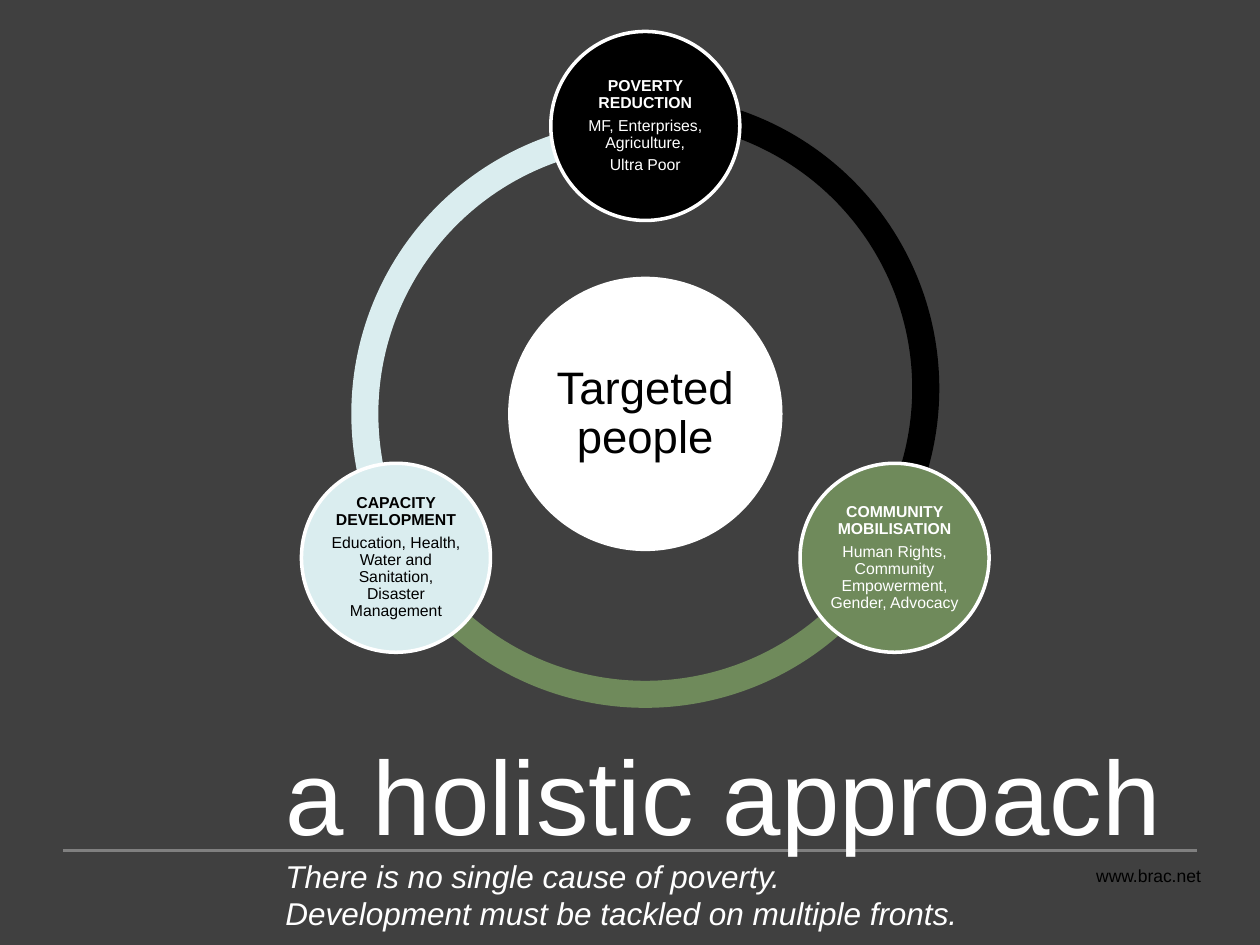
from math import cos, radians, sin

from lxml import etree
from pptx import Presentation
from pptx.dml.color import RGBColor
from pptx.enum.shapes import MSO_CONNECTOR, MSO_SHAPE
from pptx.enum.text import MSO_ANCHOR, MSO_AUTO_SIZE, PP_ALIGN
from pptx.oxml.ns import qn
from pptx.util import Pt

ARC, OVAL = MSO_SHAPE.BLOCK_ARC, MSO_SHAPE.OVAL
STRAIGHT = MSO_CONNECTOR.STRAIGHT
MIDDLE = MSO_ANCHOR.MIDDLE
GROW = MSO_AUTO_SIZE.SHAPE_TO_FIT_TEXT
LEFT, CENTER, RIGHT = PP_ALIGN.LEFT, PP_ALIGN.CENTER, PP_ALIGN.RIGHT

FONT = "Arial"
BLACK, WHITE, GREY, BACKGROUND = "000000", "FFFFFF", "808080", "404040"
PALE, GREEN = "DAEDEF", "6F8A5B"

ARCS = [
    (162, 270, 236.5, PALE),
    (18, 162, 236.5, GREEN),
    (270, 18, 222, BLACK),
]
TARGET = "Targeted people"
THEMES = [
    (-90, BLACK, WHITE, ["POVERTY REDUCTION", "MF, Enterprises, Agriculture,", "Ultra Poor"]),
    (30, GREEN, WHITE, ["COMMUNITY MOBILISATION",
                        "Human Rights, Community Empowerment, Gender, Advocacy"]),
    (150, PALE, BLACK, ["CAPACITY DEVELOPMENT",
                        "Education, Health, Water and Sanitation, Disaster Management"]),
]
TITLE = "a holistic approach"
SUBTITLE = ["There is no single cause of poverty.",
            "Development must be tackled on multiple fronts."]
WEBSITE = "www.brac.net"

CENTER_X, CENTER_Y = 368.75, 236.5
ORBIT, RING_SIZE, TARGET_SIZE, THEME_SIZE = 164.5, 336, 154.8, 108


def color(hex_code):
    return RGBColor.from_string(hex_code)


def add_round(kind, x, y, size, fill, outline=None):
    shape = slide.shapes.add_shape(kind, Pt(x - size / 2), Pt(y - size / 2), Pt(size), Pt(size))
    shape.shadow.inherit = False
    shape.fill.solid()
    shape.fill.fore_color.rgb = color(fill)
    if outline:
        shape.line.color.rgb = color(outline)
        shape.line.width = Pt(2)
    else:
        shape.line.fill.background()
    return shape


def write(frame, lines, sizes, ink, align):
    frame.word_wrap = True
    frame.text = "\n".join(lines)
    for paragraph, size in zip(frame.paragraphs, sizes):
        paragraph.alignment = align
        for run in paragraph.runs:
            run.font.name = FONT
            run.font.size = Pt(size)
            run.font.color.rgb = color(ink)


def add_disc(x, y, diameter, fill, lines, size, ink, inset):
    frame = add_round(OVAL, x, y, diameter, fill, WHITE).text_frame
    write(frame, lines, [size] * len(lines), ink, CENTER)
    frame.vertical_anchor = MIDDLE
    frame.margin_left = frame.margin_right = Pt(inset)
    frame.margin_top = frame.margin_bottom = Pt(inset)
    for paragraph in frame.paragraphs:
        paragraph.line_spacing = 0.9
        paragraph.space_after = Pt(size * 0.35)
    return frame


def add_text(left, top, width, height, lines, sizes, ink, align):
    frame = slide.shapes.add_textbox(Pt(left), Pt(top), Pt(width), Pt(height)).text_frame
    write(frame, lines, sizes, ink, align)
    frame.auto_size = GROW
    return frame


prs = Presentation()
prs.slide_width, prs.slide_height = Pt(720), Pt(540)
slide = prs.slides.add_slide(prs.slide_layouts[6])
slide.background.fill.solid()
slide.background.fill.fore_color.rgb = color(BACKGROUND)

rule = slide.shapes.add_connector(STRAIGHT, Pt(36), Pt(486), Pt(684), Pt(486))
rule.line.color.rgb = color(GREY)
rule.line.width = Pt(2)
etree.SubElement(rule._element.spPr, qn("a:effectLst"))

add_text(606.25, 491, 87, 19.5, [WEBSITE], [10], BLACK, RIGHT)

for start, end, y, fill in ARCS:
    arc = add_round(ARC, CENTER_X, y, RING_SIZE, fill)
    arc.adjustments[0] = start * 0.6
    arc.adjustments[1] = end * 0.6
    arc.adjustments[2] = 0.046

add_disc(CENTER_X, CENTER_Y, TARGET_SIZE, WHITE, [TARGET], 26, BLACK, 2.6)

for angle, fill, ink, lines in THEMES:
    x = CENTER_X + ORBIT * cos(radians(angle))
    y = CENTER_Y + ORBIT * sin(radians(angle))
    theme = add_disc(x, y, THEME_SIZE, fill, lines, 9, ink, 0.9)
    theme.paragraphs[0].runs[0].font.bold = True

heading = add_text(156, 414, 648, 124, [TITLE, *SUBTITLE], [60, 18, 18], WHITE, LEFT)
for paragraph in heading.paragraphs[1:]:
    paragraph.runs[0].font.italic = True

prs.save("out.pptx")
